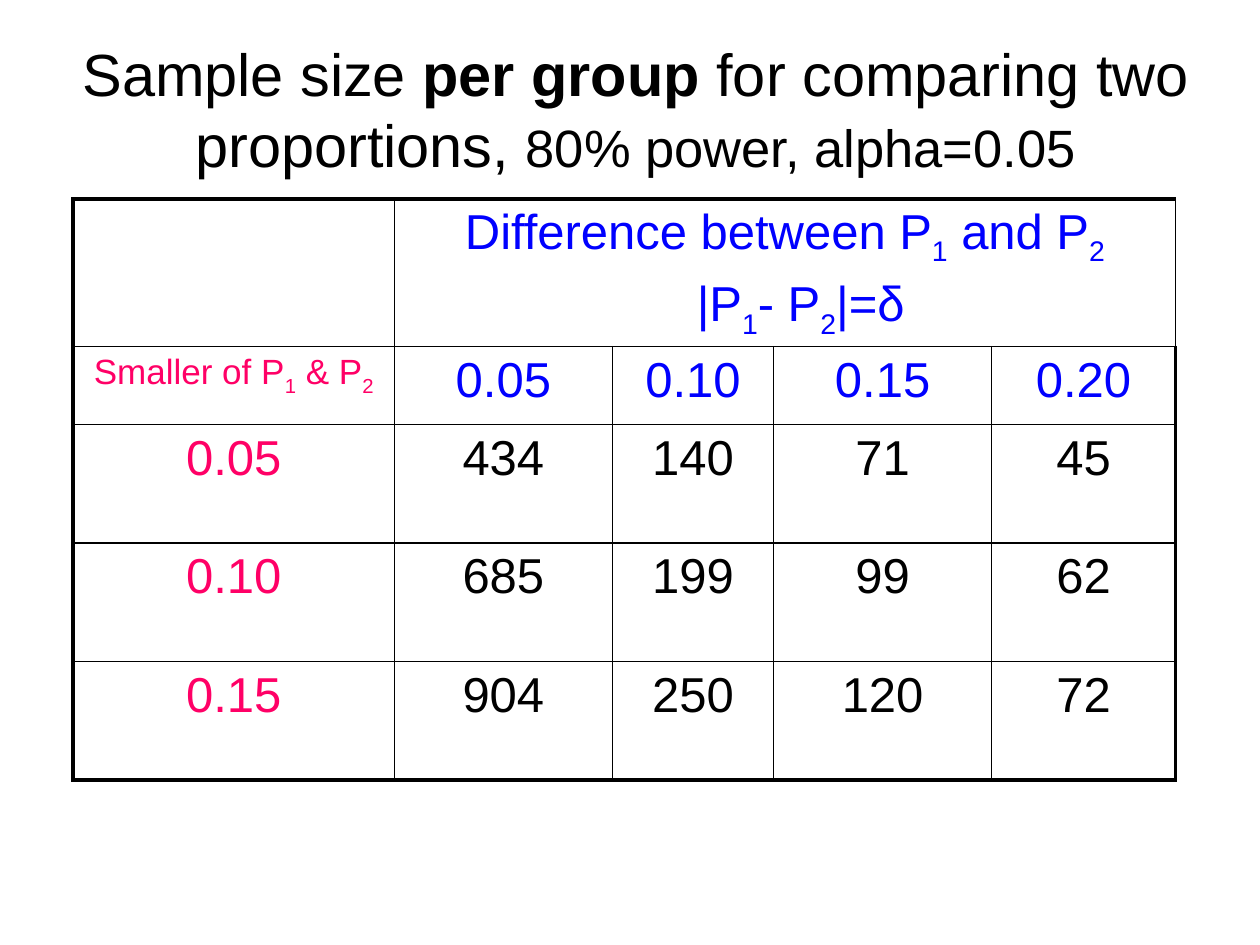
from lxml import etree
from pptx import Presentation
from pptx.dml.color import RGBColor
from pptx.enum.text import MSO_ANCHOR, MSO_AUTO_SIZE, PP_ALIGN
from pptx.oxml.ns import qn
from pptx.util import Inches, Pt

CENTER = PP_ALIGN.CENTER
MIDDLE = MSO_ANCHOR.MIDDLE
NO_AUTOFIT = MSO_AUTO_SIZE.NONE

FONT = "Arial"
COLORS = {"text": "000000", "difference": "0000FF", "smaller": "FF0066"}

TITLE = [
    ("Sample size ", 34, False),
    ("per group ", 34, True),
    ("for comparing two proportions, ", 34, False),
    ("80% power, alpha=0.05", 30, False),
]
DIFFERENCE_HEADING = [
    [("Difference between P", 0), ("1", -25), (" and P", 0), ("2", -25)],
    [("|P", 0), ("1", -25), ("- P", 0), ("2", -25), ("|=δ", 0)],
]
SMALLER_HEADING = [("Smaller of P", 0), ("1", -25), (" & P", 0), ("2", -25)]
DIFFERENCES = ["0.05", "0.10", "0.15", "0.20"]
SAMPLE_SIZES = [
    ("0.05", ["434", "140", "71", "45"]),
    ("0.10", ["685", "199", "99", "62"]),
    ("0.15", ["904", "250", "120", "72"]),
]
COL_WIDTHS = [2.55, 1.73, 1.28, 1.73, 1.46]
ROW_HEIGHTS = [0.98, 0.62, 0.94, 0.94, 0.94]
OUTER, INNER = 2.25, 1


def add_run(p, text, size, color, bold=False, baseline=0):
    r = p.add_run()
    r.text = text
    r.font.name = FONT
    r.font.size = Pt(size)
    r.font.bold = bold
    r.font.color.rgb = RGBColor.from_string(COLORS[color])
    if baseline:
        r._r.get_or_add_rPr().set("baseline", str(baseline * 1000))


def fill_paragraph(p, runs, size, color):
    p.alignment = CENTER
    space = etree.SubElement(p._p.get_or_add_pPr(), qn("a:spcBef"))
    etree.SubElement(space, qn("a:spcPct"), val="20000")
    for text, baseline in runs:
        add_run(p, text, size, color, baseline=baseline)


def fill_cell(cell, text, color):
    fill_paragraph(cell.text_frame.paragraphs[0], [(text, 0)], 28, color)


def set_borders(cell, row, col):
    edges = {
        "L": col == 0,
        "R": col == len(COL_WIDTHS) - 1,
        "T": row == 0,
        "B": row == len(ROW_HEIGHTS) - 1,
    }
    tcPr = cell._tc.get_or_add_tcPr()
    for side, outer in edges.items():
        width = Pt(OUTER if outer else INNER)
        ln = etree.SubElement(tcPr, qn(f"a:ln{side}"), w=str(width))
        fill = etree.SubElement(ln, qn("a:solidFill"))
        etree.SubElement(fill, qn("a:srgbClr"), val=COLORS["text"])


def add_title(s):
    title = s.shapes.title
    title.left, title.top = Inches(0.17), Inches(0.3)
    title.width, title.height = Inches(9.75), Inches(1.12)
    tf = title.text_frame
    tf.word_wrap = True
    tf.auto_size = NO_AUTOFIT
    tf.vertical_anchor = MIDDLE
    p = tf.paragraphs[0]
    p.alignment = CENTER
    for text, size, bold in TITLE:
        add_run(p, text, size, "text", bold)


def add_sample_table(s):
    table = s.shapes.add_table(
        len(ROW_HEIGHTS), len(COL_WIDTHS), Inches(0.58), Inches(1.58),
        Inches(sum(COL_WIDTHS)), Inches(sum(ROW_HEIGHTS)),
    ).table
    table.first_row = False
    table.horz_banding = False
    for column, width in zip(table.columns, COL_WIDTHS):
        column.width = Inches(width)
    for row, height in zip(table.rows, ROW_HEIGHTS):
        row.height = Inches(height)
    for row in range(len(ROW_HEIGHTS)):
        for col in range(len(COL_WIDTHS)):
            cell = table.cell(row, col)
            set_borders(cell, row, col)
            cell.fill.background()

    heading = table.cell(0, 1)
    heading.merge(table.cell(0, len(COL_WIDTHS) - 1))
    tf = heading.text_frame
    tf.add_paragraph()
    for p, runs in zip(tf.paragraphs, DIFFERENCE_HEADING):
        fill_paragraph(p, runs, 28, "difference")
    tf.paragraphs[1]._p.get_or_add_pPr().set("marL", str(Inches(0.25)))

    smaller = table.cell(1, 0).text_frame.paragraphs[0]
    fill_paragraph(smaller, SMALLER_HEADING, 20, "smaller")
    for col, difference in enumerate(DIFFERENCES, 1):
        fill_cell(table.cell(1, col), difference, "difference")
    for row, (proportion, sizes) in enumerate(SAMPLE_SIZES, 2):
        fill_cell(table.cell(row, 0), proportion, "smaller")
        for col, size in enumerate(sizes, 1):
            fill_cell(table.cell(row, col), size, "text")


def main():
    prs = Presentation()
    prs.slide_width, prs.slide_height = Inches(10), Inches(7.5)
    s = prs.slides.add_slide(prs.slide_layouts[5])
    add_title(s)
    add_sample_table(s)
    prs.save("out.pptx")


if __name__ == "__main__":
    main()
